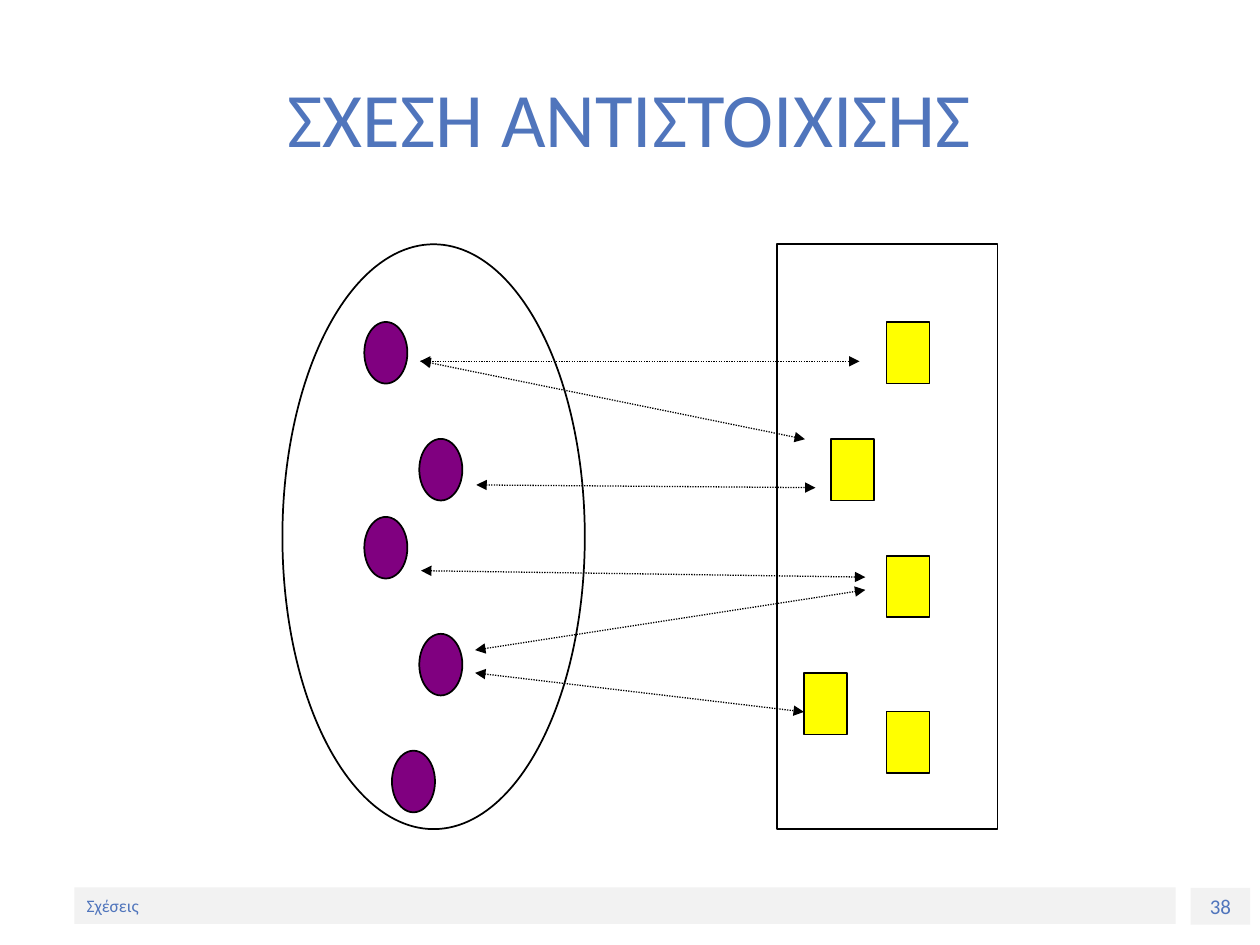
from pptx import Presentation
from pptx.dml.color import RGBColor
from pptx.enum.dml import MSO_LINE
from pptx.enum.shapes import MSO_CONNECTOR, MSO_SHAPE
from pptx.enum.text import MSO_ANCHOR, PP_ALIGN
from pptx.oxml.ns import qn
from pptx.util import Pt
from lxml.etree import SubElement

THEME = {
    "font": "Calibri",
    "title_size": 44, "number_size": 12, "footer_size": 10,
    "text": "5075BC", "bar": "F2F2F2", "paper": "FFFFFF", "ink": "000000",
    "member": "800080", "image": "FFFF00",
    "outline": 1, "arrow": 0.75,
}

TITLE = ("ΣΧΕΣΗ ΑΝΤΙΣΤΟΙΧΙΣΗΣ", (36, 21.6, 648, 90))
FOOTER = ("Σχέσεις", (42.5, 507, 629.3, 21))
NUMBER = ("38", (680.4, 507.4, 34, 21))

DOMAIN = (161.4, 139.6, 172.8, 334.2)
RANGE = (444, 139.6, 126, 334.2)
ITEM_SIZE = (24.6, 35.2)
MEMBERS = [(208.2, 184), (239.6, 250.8), (208.2, 295.4), (239.6, 362.2), (224, 429)]
IMAGES = [(506.6, 184), (475, 250.8), (506.6, 406.6), (506.6, 317.6), (459.4, 384.6)]
ARROWS = [
    ((240.2, 206.2), (460, 251)),
    ((240, 206.5), (491.2, 206.5)),
    ((272.2, 277.1), (466, 278.7)),
    ((494.5, 337.1), (271.5, 371.5)),
    ((240.6, 326.1), (494.5, 329.8)),
    ((271.5, 384.5), (459.4, 406.8)),
]


def color(name):
    return RGBColor.from_string(THEME[name])


def add_box(s, kind, box, fill, outlined=True):
    sp = s.shapes.add_shape(kind, *map(Pt, box))
    sp.shadow.inherit = False
    sp.fill.solid()
    sp.fill.fore_color.rgb = color(fill)
    if outlined:
        sp.line.color.rgb = color("ink")
        sp.line.width = Pt(THEME["outline"])
    else:
        sp.line.fill.background()
    return sp


def set_text(sp, text, size, align):
    tf = sp.text_frame
    tf.word_wrap = True
    tf.vertical_anchor = MSO_ANCHOR.MIDDLE
    p = tf.paragraphs[0]
    p.text = text
    p.alignment = align
    p.font.name = THEME["font"]
    p.font.size = Pt(THEME[size])
    p.font.color.rgb = color("text")


def add_arrow(s, start, end):
    c = s.shapes.add_connector(MSO_CONNECTOR.STRAIGHT, *map(Pt, start + end))
    c.line.color.rgb = color("ink")
    c.line.width = Pt(THEME["arrow"])
    c.line.dash_style = MSO_LINE.ROUND_DOT
    sp_pr = c._element.spPr
    ln = sp_pr.find(qn("a:ln"))
    for tag in ("a:headEnd", "a:tailEnd"):
        SubElement(ln, qn(tag), type="triangle")
    SubElement(sp_pr, qn("a:effectLst"))


def main():
    prs = Presentation()
    prs.slide_width, prs.slide_height = Pt(720), Pt(540)
    s = prs.slides.add_slide(prs.slide_layouts[6])

    for (text, box), size, align in (
        (NUMBER, "number_size", PP_ALIGN.CENTER),
        (FOOTER, "footer_size", PP_ALIGN.LEFT),
    ):
        set_text(add_box(s, MSO_SHAPE.RECTANGLE, box, "bar", False), text, size, align)

    text, box = TITLE
    set_text(s.shapes.add_textbox(*map(Pt, box)), text, "title_size", PP_ALIGN.CENTER)

    add_box(s, MSO_SHAPE.OVAL, DOMAIN, "paper")
    add_box(s, MSO_SHAPE.RECTANGLE, RANGE, "paper")
    for start, end in ARROWS:
        add_arrow(s, start, end)
    for kind, places, fill in (
        (MSO_SHAPE.OVAL, MEMBERS, "member"),
        (MSO_SHAPE.RECTANGLE, IMAGES, "image"),
    ):
        for place in places:
            add_box(s, kind, place + ITEM_SIZE, fill)

    prs.save("out.pptx")


if __name__ == "__main__":
    main()
